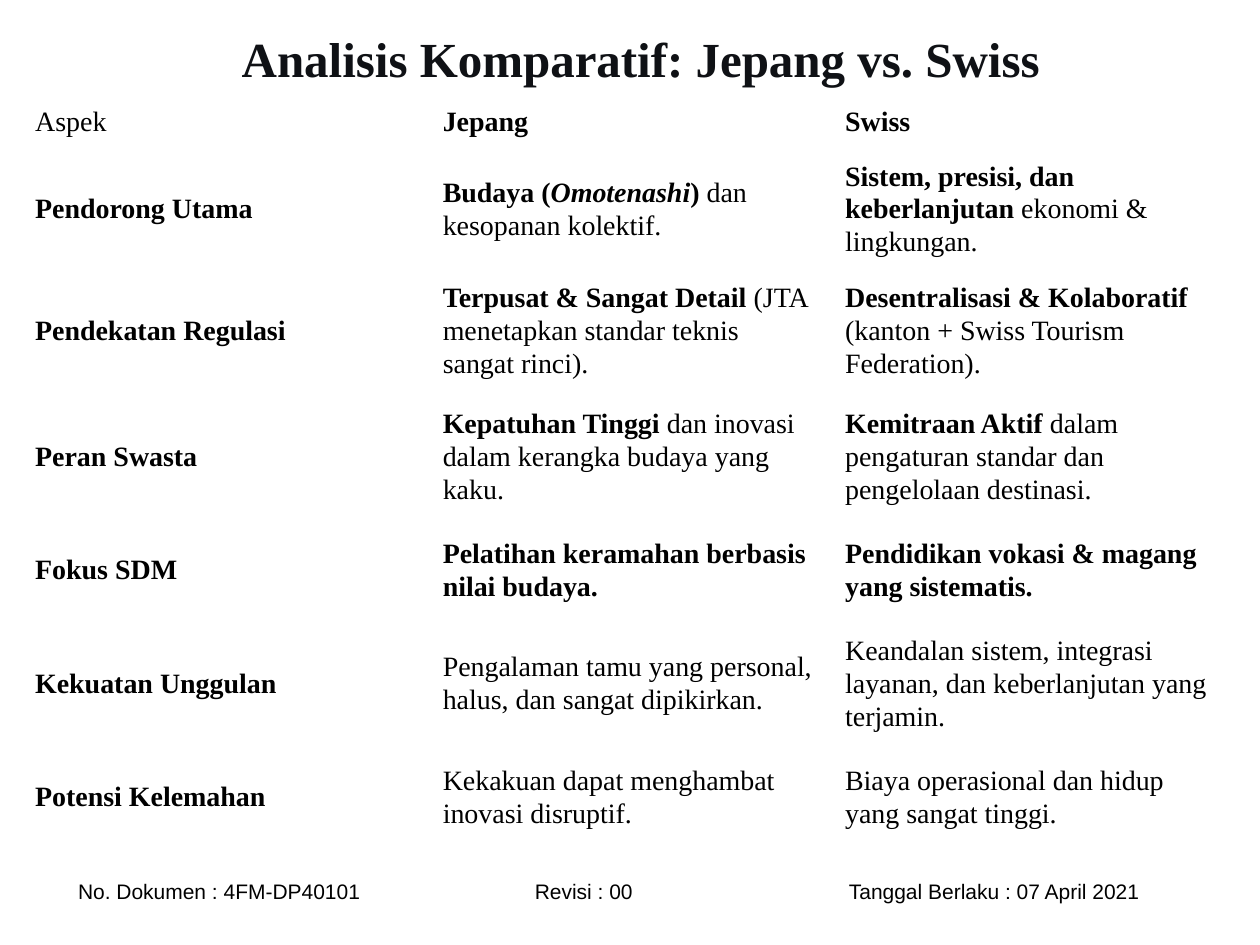
import pptx
import pptx.dml.color
import pptx.enum.text
import pptx.oxml
import pptx.oxml.ns
import pptx.util
from dataclasses import dataclass

Pt = pptx.util.Pt
Align = pptx.enum.text.PP_ALIGN
Anchor = pptx.enum.text.MSO_ANCHOR


@dataclass(frozen=True)
class Theme:
    serif: str = "Times New Roman"
    sans: str = "Arial"
    title_size: float = 28
    cell_size: float = 16
    footer_size: float = 12
    title_color: str = "0F1115"
    text_color: str = "000000"
    paper: str = "FFFFFF"


THEME = Theme()

# Content: each cell is a list of (text, style), with b for bold and i for italic
TITLE = "Analisis Komparatif: Jepang vs. Swiss"
ROWS = [
    [[("Aspek", "")], [("Jepang", "b")], [("Swiss", "b")]],
    [[("Pendorong Utama", "b")],
     [("Budaya (", "b"), ("Omotenashi", "bi"), (")", "b"), (" dan kesopanan kolektif.", "")],
     [("Sistem, presisi, dan keberlanjutan", "b"), (" ekonomi & lingkungan.", "")]],
    [[("Pendekatan Regulasi", "b")],
     [("Terpusat & Sangat Detail", "b"), (" (JTA menetapkan standar teknis sangat rinci).", "")],
     [("Desentralisasi & Kolaboratif", "b"), (" (kanton + Swiss Tourism Federation).", "")]],
    [[("Peran Swasta", "b")],
     [("Kepatuhan Tinggi", "b"), (" dan inovasi dalam kerangka budaya yang kaku.", "")],
     [("Kemitraan Aktif", "b"), (" dalam pengaturan standar dan pengelolaan destinasi.", "")]],
    [[("Fokus SDM", "b")],
     [("Pelatihan keramahan berbasis nilai budaya.", "b")],
     [("Pendidikan vokasi & magang yang sistematis.", "b")]],
    [[("Kekuatan Unggulan", "b")],
     [("Pengalaman tamu yang personal, halus, dan sangat dipikirkan.", "")],
     [("Keandalan sistem, integrasi layanan, dan keberlanjutan yang terjamin.", "")]],
    [[("Potensi Kelemahan", "b")],
     [("Kekakuan dapat menghambat inovasi disruptif.", "")],
     [("Biaya operasional dan hidup yang sangat tinggi.", "")]],
]
FOOTER = ["No. Dokumen : 4FM-DP40101", "Revisi : 00", "Tanggal Berlaku : 07 April 2021"]

# Layout in points
TITLE_BOX = (102.2, 23.8, 527.8, 31)
TABLE_LEFT, TABLE_TOP, TABLE_WIDTH = 15.1, 53.3, 689.8
ROW_HEIGHTS = [32.4, 67, 72, 72, 57.6, 72, 57.6]
CELL_LINE = 18.75
NARROW, WIDE = 5, 8
FOOTER_BOX = (14.4, 498.2, 680.4, 21.8)
FOOTER_INSET = 30.2
FOOTER_TABS = [261, 440.5]


def add_span(para, text, font, size, color, style=""):
    span = para.add_run()
    span.text = text
    span.font.name = font
    span.font.size = Pt(size)
    span.font.bold = "b" in style
    span.font.italic = "i" in style
    span.font.color.rgb = pptx.dml.color.RGBColor.from_string(color)


def add_box(page, place):
    frame = page.shapes.add_textbox(*map(Pt, place)).text_frame
    frame.word_wrap = True
    frame.auto_size = pptx.enum.text.MSO_AUTO_SIZE.SHAPE_TO_FIT_TEXT
    return frame


def add_title(page):
    para = add_box(page, TITLE_BOX).paragraphs[0]
    para.alignment = Align.CENTER
    para.line_spacing = Pt(22.5)
    para.space_after = Pt(12)
    add_span(para, TITLE, THEME.serif, THEME.title_size, THEME.title_color, "b")


def fill_cell(cell, spans, is_header, column):
    cell.fill.solid()
    cell.fill.fore_color.rgb = pptx.dml.color.RGBColor.from_string(THEME.paper)
    cell.vertical_anchor = Anchor.MIDDLE
    cell.margin_left = Pt(NARROW if column == 0 else WIDE)
    cell.margin_right = Pt(NARROW if column == 2 and not is_header else WIDE)
    cell.margin_top = cell.margin_bottom = Pt(NARROW)
    para = cell.text_frame.paragraphs[0]
    para.line_spacing = Pt(CELL_LINE)
    for text, style in spans:
        add_span(para, text, THEME.serif, THEME.cell_size, THEME.text_color, style)


def add_comparison(page):
    place = (TABLE_LEFT, TABLE_TOP, TABLE_WIDTH, sum(ROW_HEIGHTS))
    table = page.shapes.add_table(len(ROWS), len(ROWS[0]), *map(Pt, place)).table
    table.first_row = table.horz_banding = False
    for row, height in zip(table.rows, ROW_HEIGHTS):
        row.height = Pt(height)
    for r, row in enumerate(ROWS):
        for c, spans in enumerate(row):
            fill_cell(table.cell(r, c), spans, r == 0, c)


def add_footer(page):
    frame = add_box(page, FOOTER_BOX)
    frame.margin_left = Pt(FOOTER_INSET)
    frame.vertical_anchor = Anchor.MIDDLE
    para = frame.paragraphs[0]
    # Tab stops line up the three document details
    stops = "".join(f'<a:tab pos="{int(Pt(stop))}" algn="l"/>' for stop in FOOTER_TABS)
    space = pptx.oxml.ns.nsdecls("a")
    tabs = pptx.oxml.parse_xml(f"<a:tabLst {space}>{stops}</a:tabLst>")
    para._p.get_or_add_pPr().append(tabs)
    add_span(para, "\t".join(FOOTER), THEME.sans, THEME.footer_size, THEME.text_color)


def main():
    deck = pptx.Presentation()
    deck.slide_width, deck.slide_height = Pt(720), Pt(540)
    page = deck.slides.add_slide(deck.slide_layouts[6])
    add_footer(page)
    add_title(page)
    add_comparison(page)
    deck.save("out.pptx")


if __name__ == "__main__":
    main()
